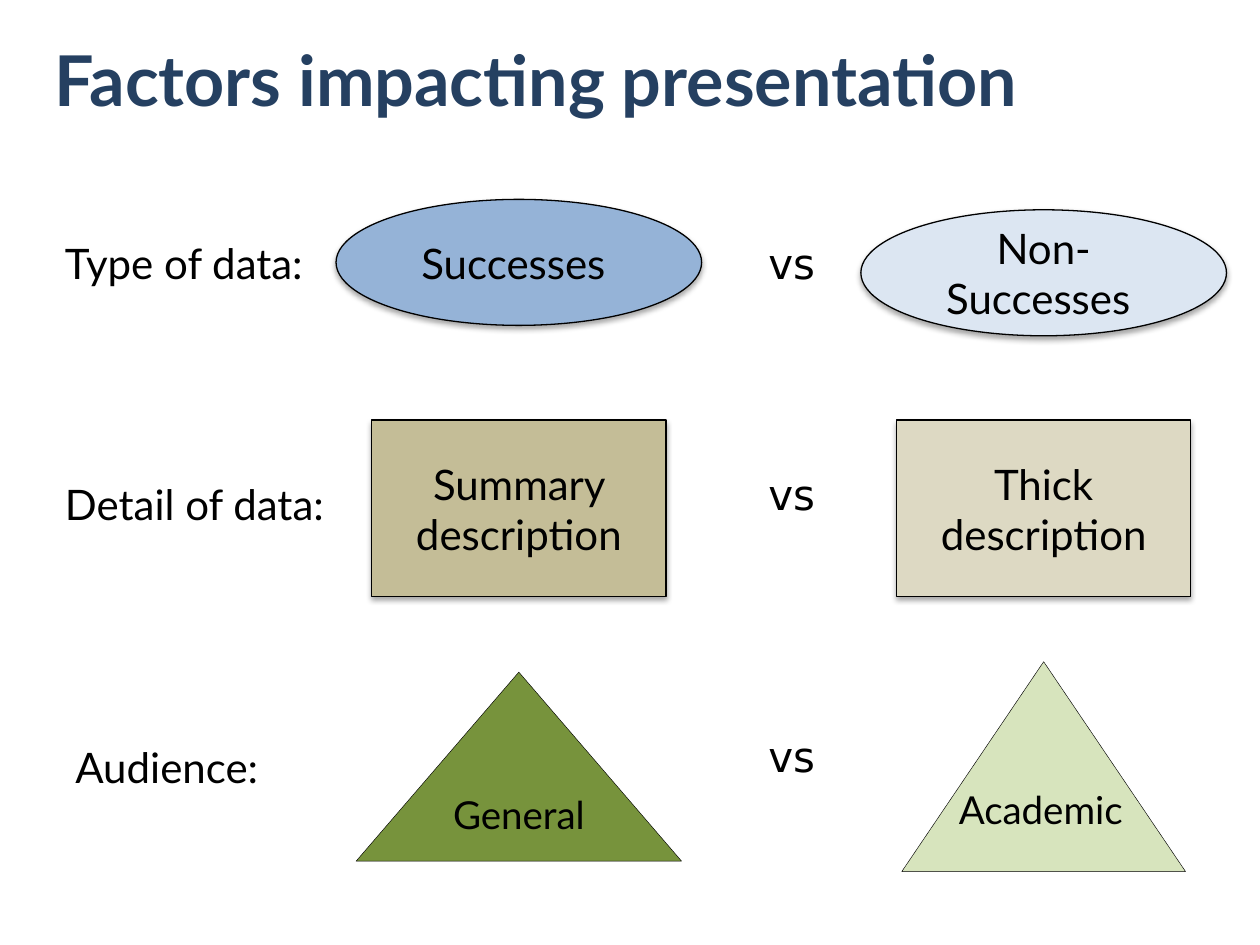
import dataclasses

import pptx
import pptx.dml.color
import pptx.enum.shapes
import pptx.enum.text
import pptx.oxml
import pptx.oxml.ns
import pptx.util
from pptx.util import Cm


@dataclasses.dataclass(frozen=True)
class Theme:
    heading: str = "254061"
    ink: str = "000000"
    blue: str = "95B3D7"
    pale_blue: str = "DCE6F2"
    tan: str = "C4BD97"
    pale_tan: str = "DDD9C3"
    green: str = "77933C"
    pale_green: str = "D7E4BD"
    font: str = "Lato"
    versus_font: str = "DejaVu Sans"
    title_size: int = 40
    body_size: int = 24
    audience_size: int = 22


theme = Theme()
rgb = pptx.dml.color.RGBColor.from_string
Shape = pptx.enum.shapes.MSO_SHAPE
Align = pptx.enum.text.PP_ALIGN
Anchor = pptx.enum.text.MSO_ANCHOR

SHADOW = (
    f'<a:outerShdw {pptx.oxml.ns.nsdecls("a")} blurRad="40000" dist="23000" '
    'dir="5400000" rotWithShape="0"><a:srgbClr val="000000">'
    '<a:alpha val="35000"/></a:srgbClr></a:outerShdw>'
)


def write(frame, lines, size, alignment, font=theme.font, color=theme.ink, bold=False):
    for index, line in enumerate(lines):
        paragraph = frame.paragraphs[0] if index == 0 else frame.add_paragraph()
        paragraph.alignment = alignment
        run = paragraph.add_run()
        run.text = line
        run.font.name = font
        run.font.size = pptx.util.Pt(size)
        run.font.bold = bold
        run.font.color.rgb = rgb(color)


def add_label(slide, left, top, width, text, size=theme.body_size, font=theme.font):
    box = slide.shapes.add_textbox(Cm(left), Cm(top), Cm(width), Cm(size * 0.054))
    box.text_frame.word_wrap = False
    box.text_frame.auto_size = pptx.enum.text.MSO_AUTO_SIZE.SHAPE_TO_FIT_TEXT
    write(box.text_frame, [text], size, Align.LEFT, font)


presentation = pptx.Presentation()
presentation.slide_width = Cm(25.4)
presentation.slide_height = Cm(19.05)
slide = presentation.slides.add_slide(presentation.slide_layouts[5])

title = slide.shapes.title
title.left, title.top, title.width, title.height = Cm(0.85), Cm(0), Cm(22.86), Cm(3.18)
title.text_frame.vertical_anchor = Anchor.MIDDLE
write(title.text_frame, ["Factors impacting presentation"], theme.title_size,
      Align.LEFT, color=theme.heading, bold=True)

left_center, right_center = 10.46, 21.04
factors = [
    (Shape.OVAL, left_center, 4.02, 7.37, 2.54, theme.blue, ["Successes "]),
    (Shape.OVAL, right_center, 4.23, 7.37, 2.54, theme.pale_blue, ["Non-Successes "]),
    (Shape.RECTANGLE, left_center, 8.47, 5.93, 3.56, theme.tan, ["Summary description"]),
    (Shape.RECTANGLE, right_center, 8.47, 5.93, 3.56, theme.pale_tan,
     ["Thick", "description"]),
    (Shape.ISOSCELES_TRIANGLE, left_center, 13.55, 6.56, 3.81, theme.green, ["General"]),
    (Shape.ISOSCELES_TRIANGLE, right_center, 13.34, 5.72, 4.23, theme.pale_green, []),
]
for kind, center, top, width, height, fill, lines in factors:
    is_triangle = kind == Shape.ISOSCELES_TRIANGLE
    shape = slide.shapes.add_shape(
        kind, Cm(center - width / 2), Cm(top), Cm(width), Cm(height))
    shape.fill.solid()
    shape.fill.fore_color.rgb = rgb(fill)
    shape.line.color.rgb = rgb(theme.ink)
    shape.line.width = pptx.util.Pt(0.25 if is_triangle else 0.75)
    shape.shadow.inherit = False
    if not is_triangle:
        effects = shape.element.spPr.find(pptx.oxml.ns.qn("a:effectLst"))
        effects.append(pptx.oxml.parse_xml(SHADOW))
    shape.text_frame.word_wrap = True
    shape.text_frame.vertical_anchor = Anchor.MIDDLE
    size = theme.audience_size if is_triangle else theme.body_size
    write(shape.text_frame, lines, size, Align.CENTER)

for top in (4.66, 9.31, 14.61):
    add_label(slide, 15.24, top, 1.47, "vs", font=theme.versus_font)

for left, top, width, text in [
    (1.06, 4.66, 5.59, "Type of data:"),
    (1.06, 9.53, 6.12, "Detail of data:"),
    (1.27, 14.82, 4.34, "Audience:"),
]:
    add_label(slide, left, top, width, text)

add_label(slide, 19.08, 15.72, 3.89, "Academic", theme.audience_size)

presentation.save("out.pptx")
